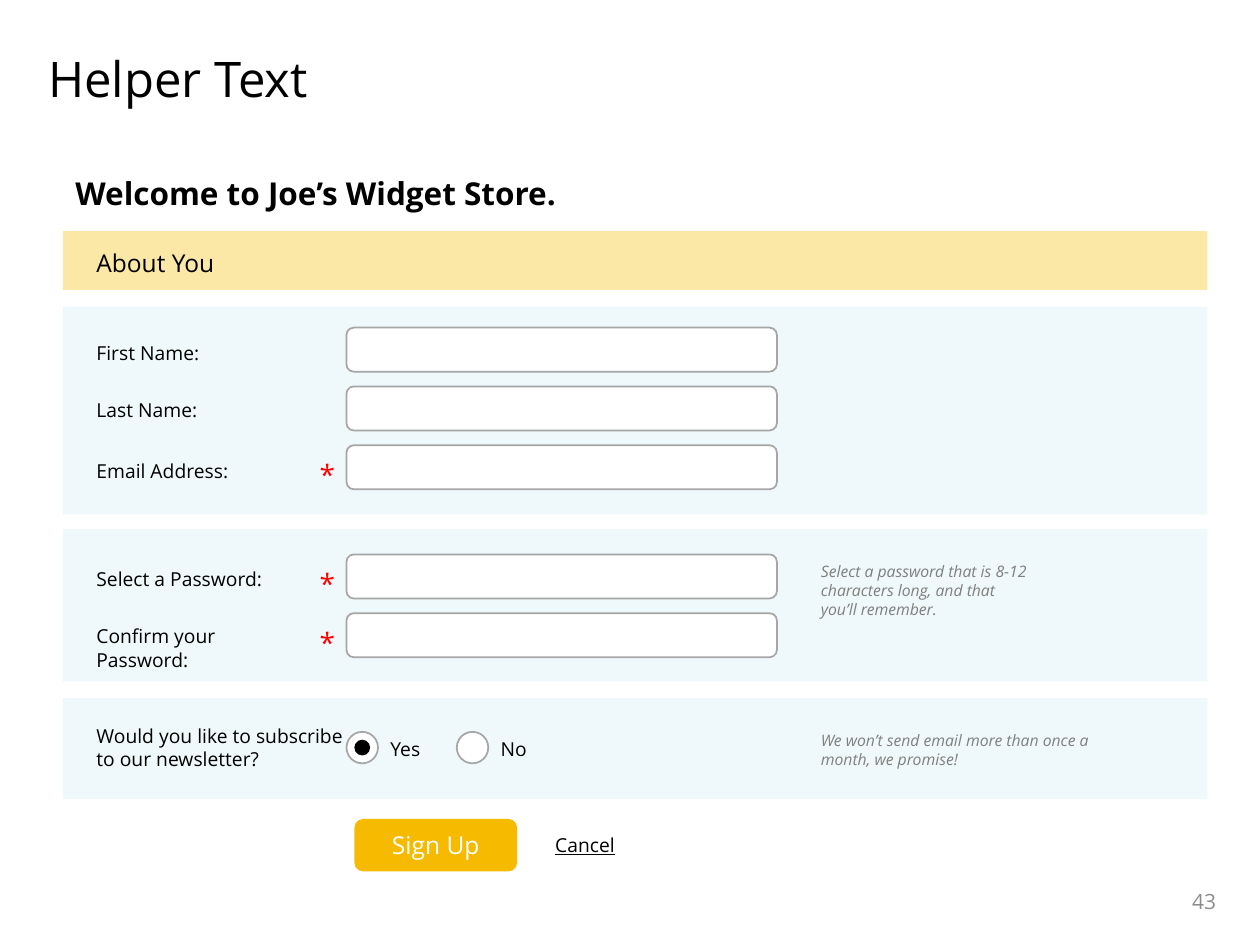
from lxml import etree
from pptx import Presentation
from pptx import util as u
from pptx.dml.color import RGBColor
from pptx.enum import shapes, text
from pptx.oxml.ns import qn

BLACK = RGBColor(0x00, 0x00, 0x00)
WHITE = RGBColor(0xFF, 0xFF, 0xFF)
GOLD = RGBColor(0xF6, 0xBB, 0x00)
PALE = RGBColor(0xEF, 0xF8, 0xFA)
EDGE = RGBColor(0xA6, 0xA6, 0xA6)
HELP = RGBColor(0x80, 0x80, 0x80)
PAGE = RGBColor(0x8C, 0x8C, 0x8C)
RED = RGBColor(0xFF, 0x00, 0x00)

FONT = "Open Sans"
WIDE, HIGH = u.Inches(10), u.Inches(7.5)
COLS, ROWS = 120, 90
KIND = shapes.MSO_SHAPE
ALIGN = text.PP_ALIGN
ANCHOR = text.MSO_ANCHOR


def grid(box):
    """Turn a box of grid columns and rows into slide lengths."""
    x, y, w, h = box
    return (int(x * WIDE / COLS), int(y * HIGH / ROWS),
            int(w * WIDE / COLS), int(h * HIGH / ROWS))


def inside(box, x, y, w, h):
    """Give the box that lies at x, y within an outer box."""
    return box[0] + x, box[1] + y, w, h


def write(shape, words, size=11, color=BLACK, bold=None, italic=None,
          under=None, align=ALIGN.LEFT, anchor=ANCHOR.TOP):
    """Set the words of a shape and their format."""
    frame = shape.text_frame
    frame.word_wrap = True
    frame.vertical_anchor = anchor
    para = frame.paragraphs[0]
    para.alignment = align
    run = para.add_run()
    run.text = words
    font = run.font
    font.name, font.size, font.color.rgb = FONT, u.Pt(size), color
    font.bold, font.italic, font.underline = bold, italic, under


def label(tree, box, words, **style):
    """Add a text box with one paragraph."""
    write(tree.add_textbox(*grid(box)), words, **style)


def draw(tree, kind, box, fill, edge=None, alpha=None):
    """Add a filled preset shape, with an outline if an edge is given."""
    shape = tree.add_shape(kind, *grid(box))
    shape.shadow.inherit = False
    shape.fill.solid()
    shape.fill.fore_color.rgb = fill
    if alpha:
        tint = shape.fill._xPr.find(".//" + qn("a:srgbClr"))
        etree.SubElement(tint, qn("a:alpha"), val=str(alpha * 1000))
    if edge:
        shape.line.color.rgb = edge
        shape.line.width = u.Pt(1)
    else:
        shape.line.fill.background()
    return shape


def header(slide, box):
    """Place the slide title, the welcome line and the form heading."""
    title = slide.shapes.title
    title.left, title.top, title.width, title.height = grid((3.4, 4, 113.6, 13))
    write(title, "Helper Text", size=28)
    tree = slide.shapes
    label(tree, inside(box, 0, -6, 69, 4.8),
          "Welcome to Joe’s Widget Store.", size=18, bold=True)
    draw(tree, KIND.RECTANGLE, box, GOLD, alpha=35)
    label(tree, inside(box, 2, 1, 69, 4.1), "About You", size=14)


def fields(tree, box, top, rows):
    """Place a panel of labelled input fields, starred where required."""
    draw(tree, KIND.RECTANGLE, box, PALE)
    for i, (words, drop, tall, must) in enumerate(rows):
        y = top + 5.6 * i
        label(tree, inside(box, 2, y + drop, 22, tall), words)
        draw(tree, KIND.ROUNDED_RECTANGLE, inside(box, 27, y, 41, 4.2),
             WHITE, edge=EDGE)
        if must:
            label(tree, inside(box, 23.25, y + 0.6, 3.2, 4.4), "*",
                  size=16, color=RED)


def hint(tree, box, wide, tall, words):
    """Place helper text in the right column of a panel."""
    label(tree, inside(box, 71, 2.5, wide, tall), words,
          size=9, color=HELP, italic=True)


def radio(tree, box, words, picked=False):
    """Place a grouped radio button with its label."""
    group = tree.add_group_shape().shapes
    label(group, inside(box, 3, -0.1, 5.5, 3.5), words)
    draw(group, KIND.OVAL, inside(box, 0, 0, 3, 3), WHITE, edge=EDGE)
    if picked:
        draw(group, KIND.OVAL, inside(box, 0.75, 0.75, 1.5, 1.5), BLACK)


def news(tree, box):
    """Place the newsletter question and its two choices."""
    draw(tree, KIND.RECTANGLE, box, PALE)
    label(tree, inside(box, 2, 1.9, 26, 5.6),
          "Would you like to subscribe to our newsletter?")
    radio(tree, inside(box, 27, 3.2, 8.5, 3), "Yes", picked=True)
    radio(tree, inside(box, 37.5, 3.2, 8.5, 3), "No")
    hint(tree, box, 29, 4.8,
         "We won’t send email more than once a month, we promise!")


def footer(tree, box):
    """Place the form actions and the page number."""
    button = draw(tree, KIND.ROUNDED_RECTANGLE, inside(box, 27.75, 0, 15.5, 5), GOLD)
    write(button, "Sign Up", size=14, color=WHITE,
          align=ALIGN.CENTER, anchor=ANCHOR.MIDDLE)
    label(tree, inside(box, 45.7, 0.8, 9.2, 3.5), "Cancel", under=True)
    label(tree, inside(box, 83, 5.4, 28, 4.8), "43", size=12, color=PAGE,
          align=ALIGN.RIGHT, anchor=ANCHOR.MIDDLE)


def main():
    """Build the sign-up form slide and save it."""
    deck = Presentation()
    deck.slide_width, deck.slide_height = WIDE, HIGH
    slide = deck.slides.add_slide(deck.slide_layouts[5])
    tree = slide.shapes
    header(slide, (6, 22, 109, 5.6))
    fields(tree, (6, 29.2, 109, 19.8), 2, [
        ("First Name:", 0.7, 3.5, False),
        ("Last Name:", 0.5, 3.5, False),
        ("Email Address:", 0.7, 3.5, True)])
    secret = (6, 50.4, 109, 14.5)
    fields(tree, secret, 2.4, [
        ("Select a Password:", 0.6, 3.5, True),
        ("Confirm your Password:", 0.5, 5.6, True)])
    hint(tree, secret, 22, 6.7,
         "Select a password that is 8-12 characters long, and that you’ll remember.")
    news(tree, (6, 66.5, 109, 9.6))
    footer(tree, (6, 78, 109, 10))
    deck.save("out.pptx")


if __name__ == "__main__":
    main()
